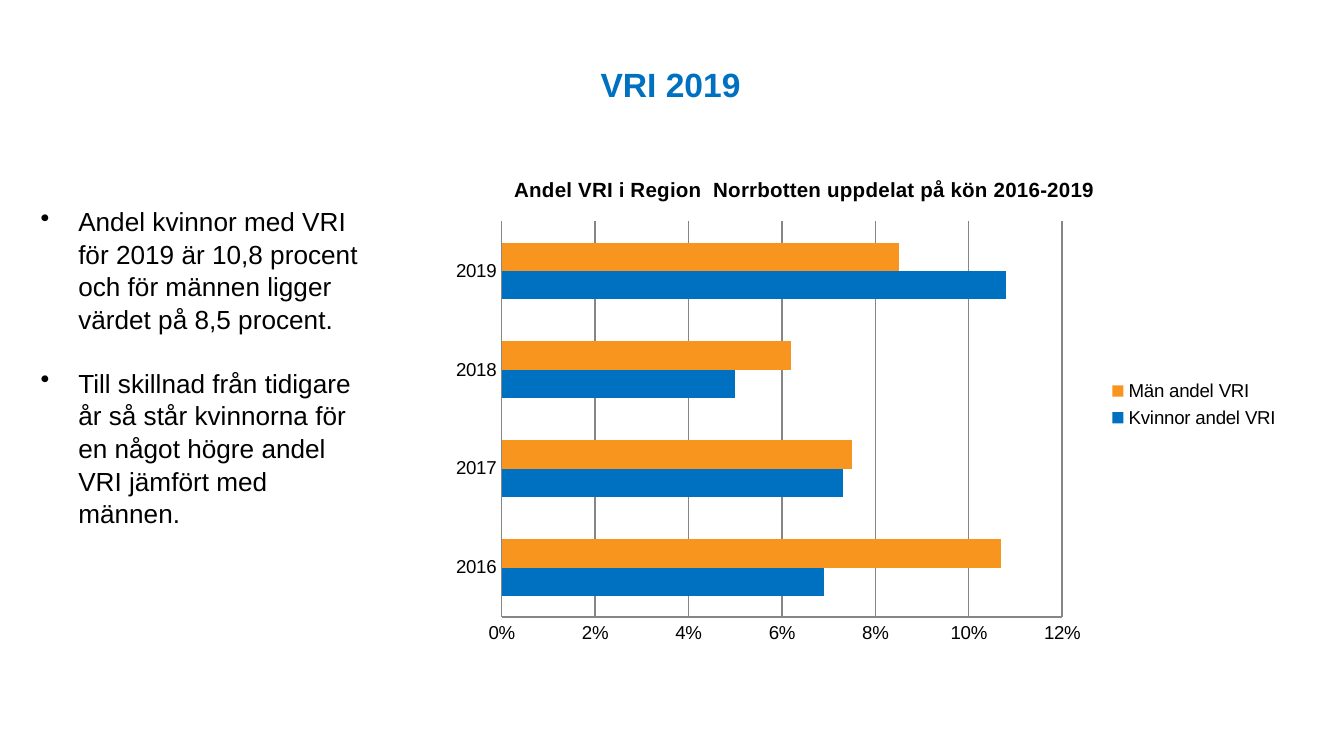
import pptx
import pptx.chart.data
import pptx.dml.color
import pptx.enum.chart
import pptx.enum.text
import pptx.oxml
import pptx.oxml.ns
import pptx.util
from pptx.util import Cm

BLUE = pptx.dml.color.RGBColor(0x00, 0x70, 0xC0)
ORANGE = pptx.dml.color.RGBColor(0xF8, 0x95, 0x1F)
BLACK = pptx.dml.color.RGBColor(0, 0, 0)
GRID_GREY = pptx.dml.color.RGBColor(0x86, 0x86, 0x86)

FINDINGS = [
    "Andel kvinnor med VRI för 2019 är 10,8 procent och för männen ligger värdet på 8,5 procent.",
    "Till skillnad från tidigare år så står kvinnorna för en något högre andel VRI jämfört med männen.",
]
YEARS = ["2016", "2017", "2018", "2019"]
SHARES = [
    ("Kvinnor andel VRI", [0.069, 0.073, 0.05, 0.108], BLUE),
    ("Män andel VRI", [0.107, 0.075, 0.062, 0.085], ORANGE),
]


def style_font(font, size, color=BLACK, bold=False):
    font.name = "Arial"
    font.size = pptx.util.Pt(size)
    font.bold = bold
    font.color.rgb = color


def add_bullet(paragraph):
    properties = paragraph._p.get_or_add_pPr()
    properties.set("marL", str(Cm(0.71)))
    properties.set("indent", str(-Cm(0.71)))
    bullet = pptx.oxml.parse_xml(
        f'<a:buChar {pptx.oxml.ns.nsdecls("a")} char="•"/>')
    properties.append(bullet)


def add_text(slide, paragraphs, left, top, width, height, size, color=BLACK,
             bold=False, align=pptx.enum.text.PP_ALIGN.LEFT,
             anchor=pptx.enum.text.MSO_ANCHOR.TOP, bullets=False,
             gap=0, line_spacing=1.0):
    frame = slide.shapes.add_textbox(
        Cm(left), Cm(top), Cm(width), Cm(height)).text_frame
    frame.word_wrap = True
    frame.vertical_anchor = anchor
    frame.margin_left = frame.margin_right = Cm(0.19)
    frame.margin_top = frame.margin_bottom = Cm(0.1)
    for index, text in enumerate(paragraphs):
        paragraph = frame.paragraphs[0] if index == 0 else frame.add_paragraph()
        if bullets:
            add_bullet(paragraph)
        paragraph.alignment = align
        paragraph.line_spacing = line_spacing
        if index:
            paragraph.space_before = pptx.util.Pt(gap)
        run = paragraph.add_run()
        run.text = text
        style_font(run.font, size, color, bold)


def place(element, x, y, width=None, height=None, inner=False):
    for previous in element.findall(pptx.oxml.ns.qn("c:layout")):
        element.remove(previous)
    target = '<c:layoutTarget val="inner"/>' if inner else ""
    sizes = "" if width is None else f'<c:w val="{width}"/><c:h val="{height}"/>'
    layout = pptx.oxml.parse_xml(
        f'<c:layout {pptx.oxml.ns.nsdecls("c")}><c:manualLayout>{target}'
        '<c:xMode val="edge"/><c:yMode val="edge"/>'
        f'<c:x val="{x}"/><c:y val="{y}"/>{sizes}</c:manualLayout></c:layout>')
    before = [child for name in ("c:tx", "c:legendPos")
              for child in element.findall(pptx.oxml.ns.qn(name))]
    element.insert(len(before), layout)


def style_axis(axis):
    axis.major_tick_mark = pptx.enum.chart.XL_TICK_MARK.NONE
    axis.minor_tick_mark = pptx.enum.chart.XL_TICK_MARK.NONE
    axis.format.line.color.rgb = GRID_GREY
    axis.format.line.width = pptx.util.Pt(0.75)
    style_font(axis.tick_labels.font, 10)


def add_share_chart(slide, left, top, width, height):
    shares = pptx.chart.data.CategoryChartData(number_format="0.0%")
    shares.categories = YEARS
    for name, values, _ in SHARES:
        shares.add_series(name, values)
    chart = slide.shapes.add_chart(
        pptx.enum.chart.XL_CHART_TYPE.BAR_CLUSTERED,
        Cm(left), Cm(top), Cm(width), Cm(height), shares).chart
    style_font(chart.font, 10)

    chart.has_title = True
    heading = chart.chart_title.text_frame.paragraphs[0].add_run()
    heading.text = "Andel VRI i Region  Norrbotten uppdelat på kön 2016-2019"
    style_font(heading.font, 11, bold=True)
    place(chart.chart_title._element, 0.08, 0.03)

    plot = chart.plots[0]
    plot.gap_width = 150
    plot.overlap = 0
    plot.vary_by_categories = False
    for series, (_, _, color) in zip(plot.series, SHARES):
        series.format.fill.solid()
        series.format.fill.fore_color.rgb = color
    place(chart._chartSpace.chart.plotArea, 0.07, 0.13, 0.66, 0.8, inner=True)

    style_axis(chart.category_axis)
    share_axis = chart.value_axis
    style_axis(share_axis)
    share_axis.minimum_scale = 0
    share_axis.maximum_scale = 0.12
    share_axis.major_unit = 0.02
    share_axis.tick_labels.number_format = "0%"
    share_axis.tick_labels.number_format_is_linked = False
    share_axis.has_major_gridlines = True
    share_axis.major_gridlines.format.line.color.rgb = GRID_GREY
    share_axis.major_gridlines.format.line.width = pptx.util.Pt(0.75)

    chart.has_legend = True
    chart.legend.position = pptx.enum.chart.XL_LEGEND_POSITION.RIGHT
    chart.legend.include_in_layout = False
    style_font(chart.legend.font, 10)
    place(chart.legend._element, 0.78, 0.44, 0.21, 0.12)


def main():
    presentation = pptx.Presentation()
    presentation.slide_width = Cm(25.4)
    presentation.slide_height = Cm(14.29)
    slide = presentation.slides.add_slide(presentation.slide_layouts[6])
    add_text(slide, ["VRI 2019"], 4.37, 1.24, 16.61, 0.84, size=18,
             color=BLUE, bold=True, align=pptx.enum.text.PP_ALIGN.CENTER,
             anchor=pptx.enum.text.MSO_ANCHOR.BOTTOM)
    add_text(slide, FINDINGS, 0.58, 3.76, 6.55, 6.17, size=14,
             bullets=True, gap=16.8, line_spacing=1.04)
    add_share_chart(slide, 8.36, 2.97, 16.05, 9.35)
    presentation.save("out.pptx")


if __name__ == "__main__":
    main()
